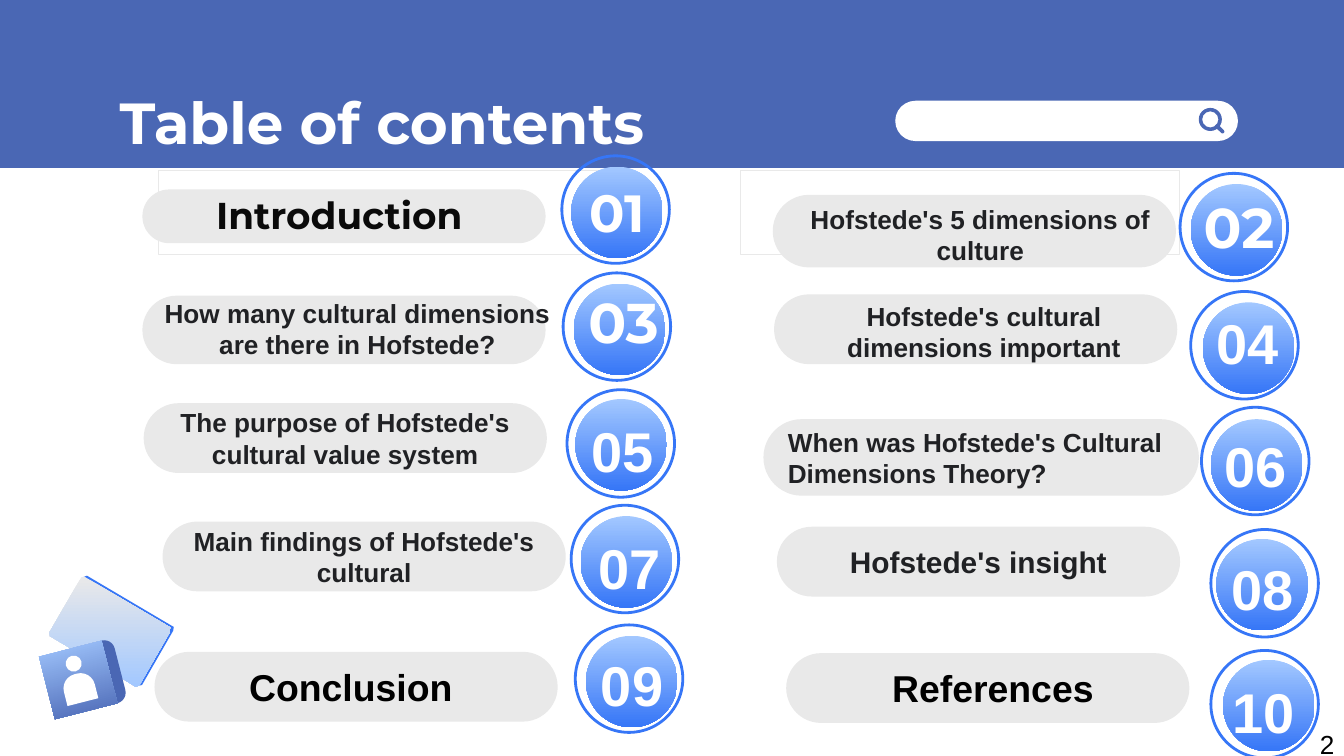
from dataclasses import dataclass
from typing import Optional

from pptx import Presentation
from pptx.dml.color import RGBColor
from pptx.enum.shapes import MSO_SHAPE
from pptx.enum.text import MSO_ANCHOR, PP_ALIGN
from pptx.util import Pt

BLUE = RGBColor(0x4A, 0x67, 0xB4)
BRIGHT = RGBColor(0x36, 0x76, 0xF7)
SKY = RGBColor(0xA3, 0xC8, 0xFF)
GRAY = RGBColor(0xE9, 0xE9, 0xE9)
WHITE = RGBColor(0xFF, 0xFF, 0xFF)
BLACK = RGBColor(0, 0, 0)
INK = RGBColor(0x20, 0x21, 0x24)
NEAR_BLACK = RGBColor(0x0A, 0x0A, 0x0A)

RING, DISC = 57.6, 49
TILT = -14.3


@dataclass
class Entry:
    """One numbered line of the contents, with its boxes in points."""
    number: str
    label: str
    pill: tuple
    ring: tuple
    disc: tuple
    number_at: tuple
    size: int = 14
    color: RGBColor = INK
    label_font: str = "Arial"
    number_font: str = "Arial"
    number_size: int = 30
    label_box: Optional[tuple] = None
    align: PP_ALIGN = PP_ALIGN.CENTER


ENTRIES = [
    Entry("01", "Introduction ", (76.3, 101.5, 216, 28.8), (301, 83.5), (306, 89.3), (301.7, 92.2),
          20, NEAR_BLACK, "Montserrat", "Montserrat", 28, (87.1, 100.8, 195, 28)),
    Entry("02", "Hofstede's 5 dimensions of culture", (414, 104.4, 216, 38.9), (632.2, 92.9),
          (637.9, 98.6), (635, 100.1), number_font="Montserrat", label_box=(403.9, 111.6, 242.6, 28)),
    Entry("03", "How many cultural dimensions are there in Hofstede?", (76.3, 158.4, 216, 36.7),
          (301.7, 146.2), (307.4, 151.9), (305.3, 151.2), number_font="Montserrat",
          label_box=(77.8, 160.5, 227.5, 31)),
    Entry("04", "Hofstede's cultural dimensions important", (414.7, 157.7, 216, 37.4),
          (637.9, 156.2), (644.4, 162), (644.4, 161.1), label_box=(416.2, 159.8, 221.8, 36)),
    Entry("05", "The purpose of Hofstede's cultural value system", (77, 216, 216, 37.4),
          (303.8, 208.8), (308.2, 213.8), (309.6, 219.4)),
    Entry("06", "When was Hofstede's Cultural Dimensions Theory?", (409, 224.6, 233.3, 41),
          (643.7, 218.2), (648.7, 224.6), (648.7, 227.4), align=PP_ALIGN.LEFT),
    Entry("07", "Main findings of Hofstede's cultural", (87.1, 279.4, 216, 37.4),
          (306, 270.7), (311, 276.5), (313.2, 282.1)),
    Entry("08", "Hofstede's insight", (416.2, 282.2, 216, 37.4),
          (648.7, 283.7), (651.6, 288.7), (652.3, 292.9), 16),
    Entry("09", "Conclusion ", (82.8, 349.2, 216, 37.4),
          (308.2, 334.8), (313.9, 340.6), (314.6, 344.7), 20, BLACK),
    Entry("10", " References", (421.2, 349.9, 216, 37.4),
          (648.7, 348.5), (655.2, 353.5), (653, 359.1), 20, BLACK),
]


def paint(shape, fill=None, line=None, width=0.75):
    """Fill with nothing, one colour or a top-to-bottom pair, and set the outline."""
    shape.shadow.inherit = False
    if fill is None:
        shape.fill.background()
    elif isinstance(fill, list):
        shape.fill.gradient()
        shape.fill.gradient_angle = 270
        for stop, color in zip(shape.fill.gradient_stops, fill):
            stop.color.rgb = color
    else:
        shape.fill.solid()
        shape.fill.fore_color.rgb = fill
    if line is None:
        shape.line.fill.background()
    else:
        shape.line.color.rgb = line
        shape.line.width = Pt(width)


def add_preset(slide, kind, box, fill=None, line=None, width=0.75, rotation=0):
    """Add a preset shape in a box given in points."""
    shape = slide.shapes.add_shape(kind, *map(Pt, box))
    paint(shape, fill, line, width)
    shape.rotation = rotation
    return shape


def add_pill(slide, box, fill, rotation=0):
    """Add a bar with fully rounded ends."""
    shape = add_preset(slide, MSO_SHAPE.ROUNDED_RECTANGLE, box, fill, rotation=rotation)
    shape.adjustments[0] = 0.5
    return shape


def write(shape, text, size, color, font="Arial", bold=True, align=PP_ALIGN.CENTER,
          wrap=True, inset=7.2):
    """Write one run in a shape, centred vertically."""
    frame = shape.text_frame
    frame.word_wrap = wrap
    frame.vertical_anchor = MSO_ANCHOR.MIDDLE
    frame.margin_left = frame.margin_right = Pt(inset)
    frame.margin_top = frame.margin_bottom = Pt(inset)
    paragraph = frame.paragraphs[0]
    paragraph.alignment = align
    run = paragraph.add_run()
    run.text = text
    run.font.size = Pt(size)
    run.font.name = font
    run.font.bold = bold
    run.font.color.rgb = color


def add_header(slide, left, top, width, height):
    """Place the title band with its search bar."""
    add_preset(slide, MSO_SHAPE.RECTANGLE, (left, top, width, height), BLUE)
    add_pill(slide, (left + 479.6, top + 54, 183.6, 21.6), WHITE)
    lens = add_preset(slide, MSO_SHAPE.DONUT, (left + 642.2, top + 57.8, 12.4, 12.4), BLUE)
    lens.adjustments[0] = 0.15
    add_pill(slide, (left + 650.5, top + 68.1, 6, 2), BLUE, 45)
    title = slide.shapes.title
    title.left, title.top, title.width, title.height = map(Pt, (left + 56.9, top + 42.5, 409.7, 44.6))
    write(title, "Table of contents", 31, WHITE, "Montserrat", align=PP_ALIGN.LEFT)
    slide.shapes._spTree.append(title._element)


def add_entry(slide, entry):
    """Place one contents line: bar, label, disc, ring and number."""
    holder = add_pill(slide, entry.pill, GRAY)
    if entry.label_box:
        holder = slide.shapes.add_textbox(*map(Pt, entry.label_box))
    write(holder, entry.label, entry.size, entry.color, entry.label_font, align=entry.align)
    add_preset(slide, MSO_SHAPE.OVAL, (*entry.disc, DISC, DISC), [SKY, BRIGHT])
    add_preset(slide, MSO_SHAPE.OVAL, (*entry.ring, RING, RING), line=BRIGHT, width=1.5)
    extent = (57.6, 41.8) if entry.number_font == "Montserrat" else (48, 44)
    number = slide.shapes.add_textbox(*map(Pt, (*entry.number_at, *extent)))
    write(number, entry.number, entry.number_size, WHITE, entry.number_font, wrap=False)


def add_bubble(slide, left, top, fill):
    """Draw the tilted message card with its tail."""
    points = [(19, 0), (65.5, 27.5), (65.2, 29.5), (48.5, 58.6), (46.5, 59),
              (32, 50), (30, 49.7), (20.5, 54), (18.5, 53), (16.8, 41.5),
              (0.8, 32), (0.5, 30), (17.5, 0.6)]
    outline = [(Pt(left + x), Pt(top + y)) for x, y in points]
    builder = slide.shapes.build_freeform(*outline[0])
    builder.add_line_segments(outline[1:])
    paint(builder.convert_to_shape(), fill)


def add_contact_icon(slide, left, top):
    """Draw the message card and the contact tile in front of it."""
    add_bubble(slide, left + 1.6, top - 0.4, BRIGHT)
    add_bubble(slide, left, top, [GRAY, SKY])
    parts = [
        (MSO_SHAPE.ROUNDED_RECTANGLE, (4.2, 36.7, 34.6, 34.6), BLUE),
        (MSO_SHAPE.RECTANGLE, (-1.4, 38.2, 34.6, 34.6), [SKY, BLUE]),
        (MSO_SHAPE.OVAL, (9.2, 42.4, 8.6, 8.6), WHITE),
        (MSO_SHAPE.ROUND_2_SAME_RECTANGLE, (8, 52, 17, 15.6), WHITE),
    ]
    for kind, (x, y, width, height), fill in parts:
        shape = add_preset(slide, kind, (left + x, top + y, width, height), fill, rotation=TILT)
        if kind == MSO_SHAPE.ROUND_2_SAME_RECTANGLE:
            shape.adjustments[0] = 0.5


def main():
    """Build the contents slide and save it."""
    presentation = Presentation()
    presentation.slide_width, presentation.slide_height = Pt(720), Pt(405)
    slide = presentation.slides.add_slide(presentation.slide_layouts[5])
    add_header(slide, 0, 0, 720, 90)
    for left in (85, 396.7):
        add_preset(slide, MSO_SHAPE.RECTANGLE, (left, 91.4, 235.4, 45), WHITE, GRAY)
    add_contact_icon(slide, 26, 308.8)
    for entry in ENTRIES:
        add_entry(slide, entry)
    page_number = slide.shapes.add_textbox(*map(Pt, (703, 390, 16, 17)))
    write(page_number, "2", 14, BLACK, bold=False, wrap=False, inset=0)
    presentation.save("out.pptx")


if __name__ == "__main__":
    main()
